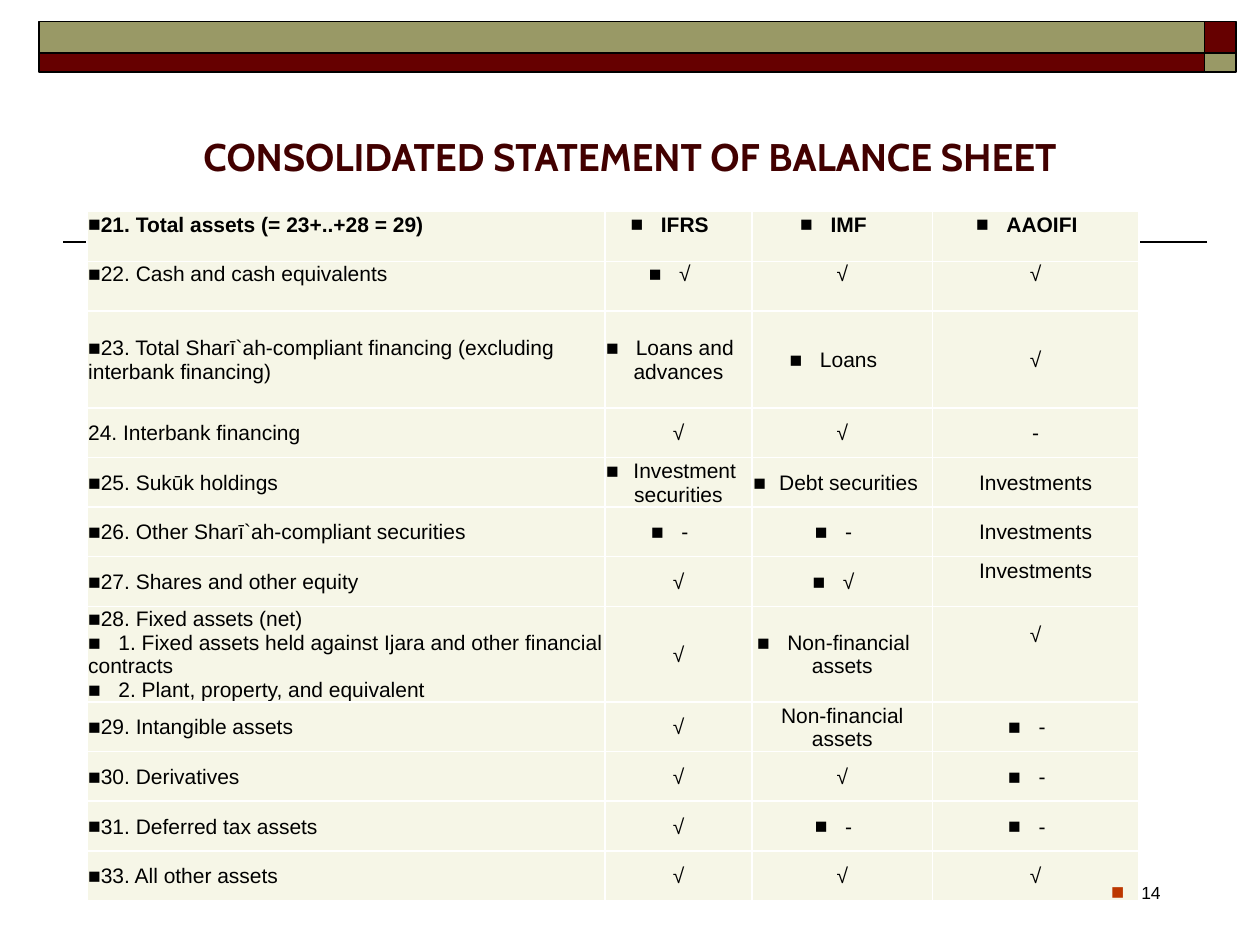
import pptx
import pptx.dml.color
import pptx.enum.shapes
import pptx.enum.text
import pptx.oxml
import pptx.oxml.ns
import pptx.util
from pptx.util import Inches

ALIGN = pptx.enum.text.PP_ALIGN
ANCHOR = pptx.enum.text.MSO_ANCHOR
BULLET = "■"
BULLET_HANG = 0.24
BLACK, WHITE, MAROON, OLIVE = "000000", "FFFFFF", "660000", "999966"
CELL_FILL, ACCENT, TITLE_COLOR = "F6F6E7", "BC3700", "420000"

BANDS = [
    (9.56, 0.17, 0.25, 0.25, MAROON),
    (0.31, 0.17, 9.25, 0.25, OLIVE),
    (0.31, 0.42, 9.25, 0.15, MAROON),
    (9.56, 0.42, 0.25, 0.15, OLIVE),
]
COLUMN_WIDTHS = [4.11, 1.17, 1.43, 1.64]
TABLE_HEIGHT = 5.47
TALL_ROWS = {2: 0.77, 7: 0.76}
TOP_ROWS = 2
RAISED_CELLS = {(6, 3): 0.18, (7, 3): 0.32}
TAB_STOP = 0.24
ROWS = [
    ["■21. Total assets (= 23+..+28 = 29)", "■IFRS", "■IMF", "■AAOIFI"],
    ["■22. Cash and cash equivalents", "■√", "√", "√"],
    ["■23. Total Sharī`ah-compliant financing (excluding interbank financing)",
     "■Loans and advances", "■Loans", "√"],
    ["24. Interbank financing", "√", "√", "-"],
    ["■25. Sukūk holdings", "■Investment securities", "■Debt securities", "Investments"],
    ["■26. Other Sharī`ah-compliant securities", "■-", "■-", "Investments"],
    ["■27. Shares and other equity", "√", "■√", "Investments"],
    ["■28. Fixed assets (net)\n"
     "■\t1. Fixed assets held against Ijara and other financial contracts\n"
     "■\t2. Plant, property, and equivalent", "√", "■Non-financial assets", "√"],
    ["■29. Intangible assets", "√", "Non-financial assets", "■-"],
    ["■30. Derivatives", "√", "√", "■-"],
    ["■31. Deferred tax assets", "√", "■-", "■-"],
    ["■33. All other assets", "√", "√", "√"],
]


def rgb(color):
    """Turn a hex string into a colour value."""
    return pptx.dml.color.RGBColor.from_string(color)


def set_all(target, values):
    """Set each attribute named in a dict."""
    for name, value in values.items():
        setattr(target, name, value)


def add_xml(parent, tag, **attributes):
    """Append a drawing element with its attributes and return it."""
    child = parent.makeelement(pptx.oxml.ns.qn(tag), attributes)
    parent.append(child)
    return child


def add_bullet(para, color, percent):
    """Give a paragraph a hanging square bullet."""
    properties = para._p.get_or_add_pPr()
    properties.set("marL", "0")
    properties.set("indent", str(-Inches(BULLET_HANG)))
    add_xml(add_xml(properties, "a:buClr"), "a:srgbClr", val=color)
    add_xml(properties, "a:buSzPct", val=str(percent * 1000))
    add_xml(properties, "a:buFont", typeface="Arial")
    add_xml(properties, "a:buChar", char=BULLET)


def add_tab_stop(para, position):
    """Add a left tab stop to a paragraph."""
    stops = add_xml(para._p.get_or_add_pPr(), "a:tabLst")
    add_xml(stops, "a:tab", pos=str(Inches(position)), algn="l")


def write_text(frame, text, align, size=12, color=BLACK, bold=False,
               font="Arial", bullet_color=BLACK, bullet_percent=100):
    """Write lines into a frame, with a bullet where a line starts with one."""
    for index, line in enumerate(text.split("\n")):
        para = frame.add_paragraph() if index else frame.paragraphs[0]
        para.alignment = align
        if line.startswith(BULLET):
            add_bullet(para, bullet_color, bullet_percent)
        if "\t" in line:
            add_tab_stop(para, TAB_STOP)
        span = para.add_run()
        span.text = line.removeprefix(BULLET)
        set_all(span.font, {"name": font, "size": pptx.util.Pt(size), "bold": bold})
        span.font.color.rgb = rgb(color)


def add_text(page, place, text, align, anchor, **style):
    """Add a wrapping text box."""
    box = page.shapes.add_textbox(*map(Inches, place))
    set_all(box.text_frame, {"word_wrap": True, "vertical_anchor": anchor})
    write_text(box.text_frame, text, align, **style)


def add_band(page, left, top, width, height, color):
    """Add an outlined rectangle of the header band."""
    band = page.shapes.add_shape(pptx.enum.shapes.MSO_SHAPE.RECTANGLE,
                                 *map(Inches, (left, top, width, height)))
    band.shadow.inherit = False
    band.fill.solid()
    band.fill.fore_color.rgb = rgb(color)
    band.line.color.rgb = rgb(BLACK)
    band.line.width = pptx.util.Pt(1)


def add_rule(page, start_x, end_x, y):
    """Add a thin horizontal line."""
    rule = page.shapes.add_connector(pptx.enum.shapes.MSO_CONNECTOR.STRAIGHT,
                                     *map(Inches, (start_x, y, end_x, y)))
    rule.line.color.rgb = rgb(BLACK)
    rule.line.width = pptx.util.Pt(1)
    add_xml(rule._element.spPr, "a:effectLst")


def style_cell(cell, anchor, bottom):
    """Set margins, white borders and fill of a table cell."""
    set_all(cell, {"margin_left": Inches(0.01), "margin_right": Inches(0.01),
                   "margin_top": Inches(0.01), "margin_bottom": Inches(bottom),
                   "vertical_anchor": anchor})
    properties = cell._tc.get_or_add_tcPr()
    for side in ("a:lnL", "a:lnR", "a:lnT", "a:lnB"):
        border = add_xml(properties, side, w=str(pptx.util.Pt(1)))
        add_xml(add_xml(border, "a:solidFill"), "a:srgbClr", val=WHITE)
    cell.fill.solid()
    cell.fill.fore_color.rgb = rgb(CELL_FILL)


def add_balance_table(page, left, top):
    """Add the balance sheet comparison table."""
    plain_height = (TABLE_HEIGHT - sum(TALL_ROWS.values())) / (len(ROWS) - len(TALL_ROWS))
    size = (sum(COLUMN_WIDTHS), TABLE_HEIGHT)
    table = page.shapes.add_table(len(ROWS), len(COLUMN_WIDTHS),
                                  *map(Inches, (left, top, *size))).table
    set_all(table, {"first_row": False, "horz_banding": False})
    for column, width in zip(table.columns, COLUMN_WIDTHS):
        column.width = Inches(width)
    for row_index, row in enumerate(table.rows):
        row.height = Inches(TALL_ROWS.get(row_index, plain_height))
        anchor = ANCHOR.TOP if row_index < TOP_ROWS else ANCHOR.MIDDLE
        for column_index, text in enumerate(ROWS[row_index]):
            cell = table.cell(row_index, column_index)
            style_cell(cell, anchor, RAISED_CELLS.get((row_index, column_index), 0))
            align = ALIGN.CENTER if column_index else ALIGN.LEFT
            write_text(cell.text_frame, text, align, bold=row_index == 0)


def main():
    """Build the slide and save it."""
    deck = pptx.Presentation()
    set_all(deck, {"slide_width": Inches(10), "slide_height": Inches(7.5)})
    page = deck.slides.add_slide(deck.slide_layouts[6])
    add_rule(page, 9.58, 0.5, 1.92)
    for band in BANDS:
        add_band(page, *band)
    add_balance_table(page, 0.69, 1.68)
    add_text(page, (7.06, 6.95, 2.25, 0.4), "■14", ALIGN.RIGHT, ANCHOR.TOP,
             size=10, bullet_color=ACCENT, bullet_percent=125)
    add_text(page, (0.69, 1, 8.62, 0.48), "CONSOLIDATED STATEMENT OF BALANCE SHEET",
             ALIGN.CENTER, ANCHOR.MIDDLE, size=22, color=TITLE_COLOR, bold=True,
             font="Cabin")
    deck.save("out.pptx")


if __name__ == "__main__":
    main()
